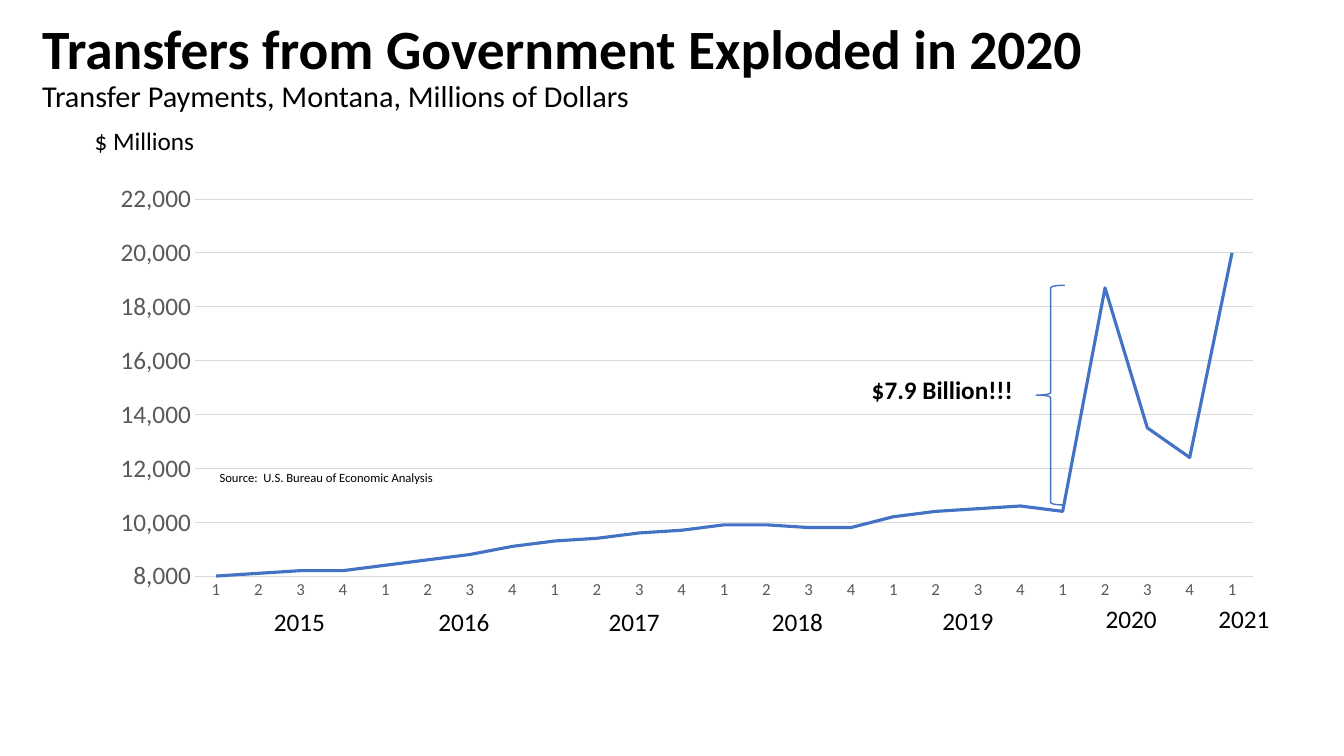
from dataclasses import dataclass

from pptx import Presentation
from pptx.chart.data import CategoryChartData
from pptx.dml.color import RGBColor
from pptx.enum.chart import XL_CHART_TYPE as ChartType, XL_TICK_MARK as TickMark
from pptx.enum.shapes import MSO_SHAPE as Shape
from pptx.enum.text import MSO_ANCHOR as Anchor, MSO_AUTO_SIZE as AutoSize
from pptx.oxml import parse_xml
from pptx.oxml.ns import nsdecls
from pptx.util import Inches, Pt

COLUMN, ROW = Inches(13.33) / 40, Inches(7.5) / 30


@dataclass(frozen=True)
class Theme:
    """Colours, typeface and type sizes of the slide."""
    font: str = "Calibri"
    ink: RGBColor = RGBColor(0, 0, 0)
    axis: RGBColor = RGBColor(0x59, 0x59, 0x59)
    grid: RGBColor = RGBColor(0xD9, 0xD9, 0xD9)
    accent: RGBColor = RGBColor(0x44, 0x72, 0xC4)
    title: float = 39.6
    subtitle: float = 21.6
    label: float = 18
    quarter: float = 12
    chart: float = 10
    source: float = 9


THEME = Theme()
TRANSFERS = (
    8000, 8100, 8200, 8200,
    8400, 8600, 8800, 9100,
    9300, 9400, 9600, 9700,
    9900, 9900, 9800, 9800,
    10200, 10400, 10500, 10600,
    10400, 18700, 13500, 12400,
    20000,
)
YEAR_LABELS = (
    ("2015", 7.86, 23.88), ("2016", 12.75, 23.88), ("2017", 17.82, 23.88),
    ("2018", 22.68, 23.88), ("2019", 27.75, 23.84), ("2020", 32.61, 23.76),
    ("2021", 35.97, 23.76),
)


def place(column, row, columns, rows):
    """Turn grid units into left, top, width and height."""
    return (round(column * COLUMN), round(row * ROW),
            round(columns * COLUMN), round(rows * ROW))


def style_font(font, size, color=THEME.ink, bold=False):
    """Apply the theme typeface with a size, colour and weight."""
    font.name, font.size, font.bold = THEME.font, Pt(size), bold
    font.color.rgb = color


def add_heading(slide, title, subtitle):
    """Add the title with its subtitle line."""
    frame = slide.shapes.add_textbox(*place(0.96, 1.4, 37.05, 5)).text_frame
    frame.word_wrap = True
    frame.vertical_anchor = Anchor.BOTTOM
    frame.margin_bottom = Inches(0.47)
    frame.text = f"{title}\n{subtitle}"
    sizes = ((THEME.title, True), (THEME.subtitle, False))
    for line, (size, bold) in zip(frame.paragraphs, sizes):
        line.line_spacing = 0.9
        style_font(line.runs[0].font, size, bold=bold)


def add_label(slide, text, area, size=THEME.label, bold=False):
    """Add a one-line label in a grid area."""
    frame = slide.shapes.add_textbox(*place(*area)).text_frame
    frame.word_wrap = True
    frame.auto_size = AutoSize.SHAPE_TO_FIT_TEXT
    frame.text = text
    style_font(frame.paragraphs[0].runs[0].font, size, bold=bold)


def style_axis(axis, size):
    """Give an axis its type and remove its tick marks."""
    axis.major_tick_mark = axis.minor_tick_mark = TickMark.NONE
    style_font(axis.tick_labels.font, size, THEME.axis)


def style_line(line, color, width):
    """Set the colour and width of a line."""
    line.color.rgb, line.width = color, Pt(width)


def fix_plot_area(chart, x, y, w, h):
    """Set the inner plot area as shares of the chart."""
    plot_area = chart.element.chart.plotArea
    for layout in plot_area.findall("{*}layout"):
        plot_area.remove(layout)
    shares = "".join(f'<c:{key} val="{share}"/>'
                     for key, share in (("x", x), ("y", y), ("w", w), ("h", h)))
    plot_area.insert(0, parse_xml(
        f'<c:layout {nsdecls("c")}><c:manualLayout><c:layoutTarget val="inner"/>'
        f'<c:xMode val="edge"/><c:yMode val="edge"/>{shares}'
        '</c:manualLayout></c:layout>'))


def add_transfer_chart(slide):
    """Add the quarterly line chart of transfer payments."""
    data = CategoryChartData(number_format="#,##0")
    data.categories = [str(i % 4 + 1) for i in range(len(TRANSFERS))]
    data.add_series("Series 1", TRANSFERS)
    chart = slide.shapes.add_chart(
        ChartType.LINE, *place(3, 7.04, 35, 17.2), data).chart
    chart.has_legend = chart.has_title = False
    style_font(chart.font, THEME.chart)
    fix_plot_area(chart, 0.08, 0.05, 0.9, 0.87)

    quarters, millions = chart.category_axis, chart.value_axis
    style_axis(quarters, THEME.quarter)
    style_line(quarters.format.line, THEME.grid, 0.75)
    style_axis(millions, THEME.label)
    millions.format.line.fill.background()
    style_line(millions.major_gridlines.format.line, THEME.grid, 0.75)
    millions.minimum_scale, millions.maximum_scale = 8000, 22000
    millions.major_unit = 2000
    millions.tick_labels.number_format = "#,##0"
    millions.tick_labels.number_format_is_linked = False

    chart.plots[0].vary_by_categories = False
    transfers = chart.plots[0].series[0]
    transfers.smooth = False
    style_line(transfers.format.line, THEME.accent, 2.25)


def add_jump_brace(slide):
    """Add the brace that spans the 2020 jump."""
    brace = slide.shapes.add_shape(Shape.LEFT_BRACE, *place(30.85, 11.32, 0.84, 8.72))
    brace.shadow.inherit = False
    brace.fill.background()
    style_line(brace.line, THEME.accent, 1)


def main():
    """Build the slide and save it."""
    deck = Presentation()
    deck.slide_width, deck.slide_height = round(40 * COLUMN), round(30 * ROW)
    slide = deck.slides.add_slide(deck.slide_layouts[6])
    add_heading(slide, "Transfers from Government Exploded in 2020",
                "Transfer Payments, Montana, Millions of Dollars")
    add_transfer_chart(slide)
    for year, column, row in YEAR_LABELS:
        add_label(slide, year, (column, row, 2.5, 1.6))
    add_label(slide, "$ Millions", (2.52, 4.76, 5.37, 1.6))
    add_jump_brace(slide)
    add_label(slide, "$7.9 Billion!!!", (25.65, 14.64, 5.73, 1.6), bold=True)
    add_label(slide, "Source:  U.S. Bureau of Economic Analysis",
              (6.24, 18.44, 10.29, 1), THEME.source)
    deck.save("out.pptx")


if __name__ == "__main__":
    main()
